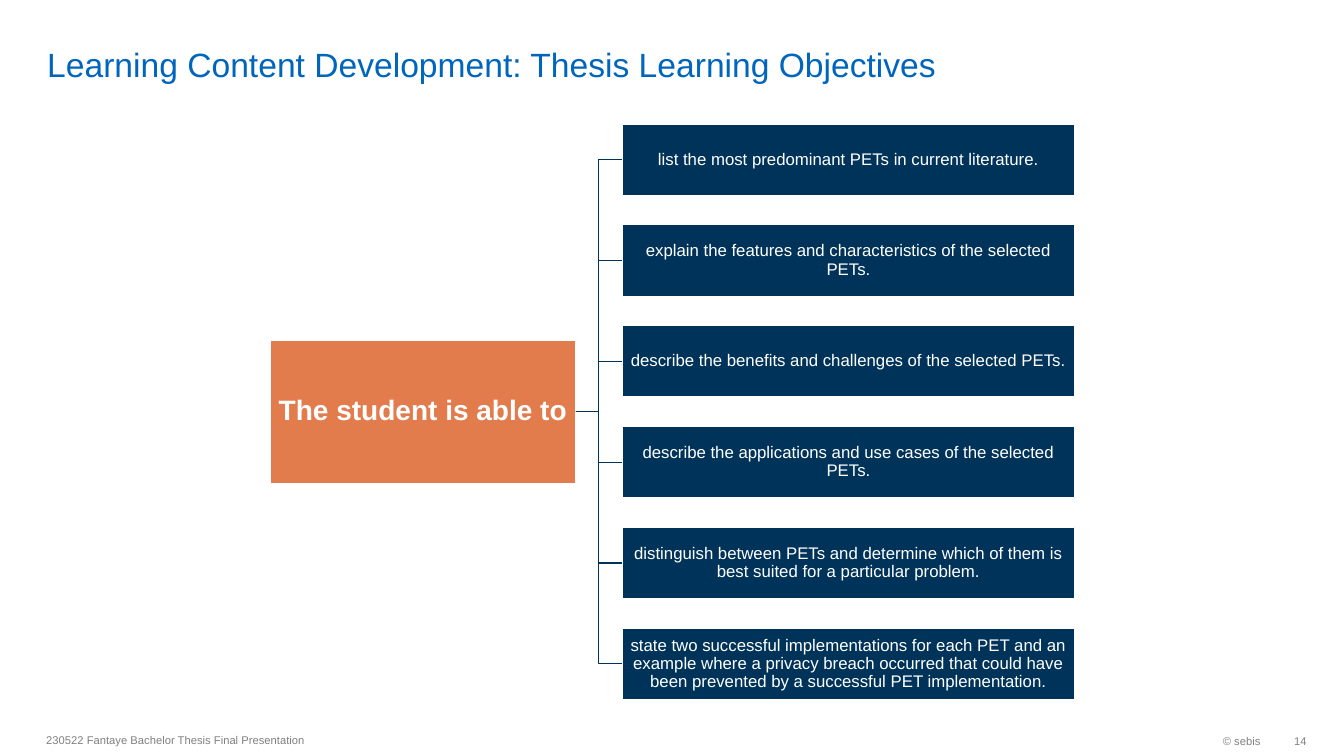
from dataclasses import dataclass

from pptx import Presentation
from pptx.dml.color import RGBColor
from pptx.enum.shapes import MSO_CONNECTOR, MSO_SHAPE
from pptx.enum.text import MSO_ANCHOR, PP_ALIGN
from pptx.oxml.ns import qn
from pptx.shapes.autoshape import Shape
from pptx.slide import Slide
from pptx.util import Inches, Pt
from lxml.etree import SubElement


@dataclass(frozen=True)
class Theme:
    font: str = "Arial"
    title: RGBColor = RGBColor(0x00, 0x65, 0xBD)
    navy: RGBColor = RGBColor(0x00, 0x33, 0x59)
    orange: RGBColor = RGBColor(0xE3, 0x7C, 0x4D)
    white: RGBColor = RGBColor(0xFF, 0xFF, 0xFF)
    gray: RGBColor = RGBColor(0x80, 0x80, 0x80)
    title_size: float = 24
    root_size: float = 20
    body_size: float = 12
    footer_size: float = 8
    line: float = 0.85


@dataclass(frozen=True)
class Label:
    text: str
    left: float
    top: float
    width: float
    height: float
    size: float
    color: RGBColor
    align: PP_ALIGN = PP_ALIGN.LEFT
    anchor: MSO_ANCHOR = MSO_ANCHOR.MIDDLE
    margins: tuple[float, float, float, float] = (0.1, 0.05, 0.1, 0.05)
    bold: bool = False
    spacing: float = 1.0


T = Theme()
NODE_LEFT, NODE_TOP, NODE_WIDTH, NODE_HEIGHT, NODE_PITCH = 6.17, 1.23, 4.49, 0.71, 1.0
ROOT_LEFT, ROOT_WIDTH, ROOT_HEIGHT = 2.68, 3.03, 1.42

OBJECTIVES = [
    "list the most predominant PETs in current literature.",
    "explain the features and characteristics of the selected PETs.",
    "describe the benefits and challenges of the selected PETs.",
    "describe the applications and use cases of the selected PETs.",
    "distinguish between PETs and determine which of them is best suited for a particular problem.",
    "state two successful implementations for each PET and an example where a privacy breach "
    "occurred that could have been prevented by a successful PET implementation.",
]

LABELS = [
    Label("Learning Content Development: Thesis Learning Objectives", 0.37, 0.05, 11.58, 0.79,
          T.title_size, T.title, anchor=MSO_ANCHOR.BOTTOM, margins=(0.1, 0, 0.1, 0)),
    Label("230522 Fantaye Bachelor Thesis Final Presentation", 0.36, 7.18, 6.3, 0.32,
          T.footer_size, T.gray),
    Label("© sebis", 10.26, 7.19, 2.34, 0.32, T.footer_size, T.gray, PP_ALIGN.RIGHT),
    Label("14", 12.6, 7.19, 0.36, 0.32, T.footer_size, T.gray, PP_ALIGN.RIGHT,
          margins=(0.1, 0.05, 0, 0.05)),
]


def write_text(sp: Shape, label: Label) -> None:
    tf = sp.text_frame
    tf.word_wrap = True
    tf.vertical_anchor = label.anchor
    tf.margin_left, tf.margin_top, tf.margin_right, tf.margin_bottom = map(Inches, label.margins)
    p = tf.paragraphs[0]
    p.alignment = label.align
    p.line_spacing = label.spacing
    r = p.add_run()
    r.text = label.text
    r.font.name = T.font
    r.font.size = Pt(label.size)
    r.font.bold = label.bold
    r.font.color.rgb = label.color


def add_label(s: Slide, label: Label) -> None:
    box = map(Inches, (label.left, label.top, label.width, label.height))
    write_text(s.shapes.add_textbox(*box), label)


def add_node(s: Slide, label: Label, fill: RGBColor) -> Shape:
    box = map(Inches, (label.left, label.top, label.width, label.height))
    sp = s.shapes.add_shape(MSO_SHAPE.RECTANGLE, *box)
    sp.shadow.inherit = False
    sp.fill.solid()
    sp.fill.fore_color.rgb = fill
    sp.line.color.rgb = T.white
    sp.line.width = Pt(T.line)
    write_text(sp, label)
    return sp


def add_branch(s: Slide, root: Shape, node: Shape) -> None:
    cx = s.shapes.add_connector(
        MSO_CONNECTOR.ELBOW,
        root.left + root.width, root.top + root.height // 2,
        node.left, node.top + node.height // 2,
    )
    cx.begin_connect(root, 3)
    cx.end_connect(node, 1)
    cx.line.color.rgb = T.navy
    cx.line.width = Pt(T.line)
    SubElement(cx._element.spPr, qn("a:effectLst"))


def node_label(text: str, left: float, top: float, width: float, height: float,
               size: float, bold: bool = False) -> Label:
    return Label(text, left, top, width, height, size, T.white, PP_ALIGN.CENTER,
                 margins=(0.01, 0.01, 0.01, 0.01), bold=bold, spacing=0.9)


def main() -> None:
    prs = Presentation()
    prs.slide_width, prs.slide_height = Inches(13.33), Inches(7.5)
    s = prs.slides.add_slide(prs.slide_layouts[6])

    tree_height = NODE_PITCH * (len(OBJECTIVES) - 1) + NODE_HEIGHT
    root_top = NODE_TOP + (tree_height - ROOT_HEIGHT) / 2
    root = add_node(s, node_label("The student is able to", ROOT_LEFT, root_top, ROOT_WIDTH,
                                  ROOT_HEIGHT, T.root_size, True), T.orange)
    for i, text in enumerate(OBJECTIVES):
        top = NODE_TOP + i * NODE_PITCH
        node = add_node(s, node_label(text, NODE_LEFT, top, NODE_WIDTH, NODE_HEIGHT,
                                      T.body_size), T.navy)
        add_branch(s, root, node)

    for label in LABELS:
        add_label(s, label)
    prs.save("out.pptx")


if __name__ == "__main__":
    main()
